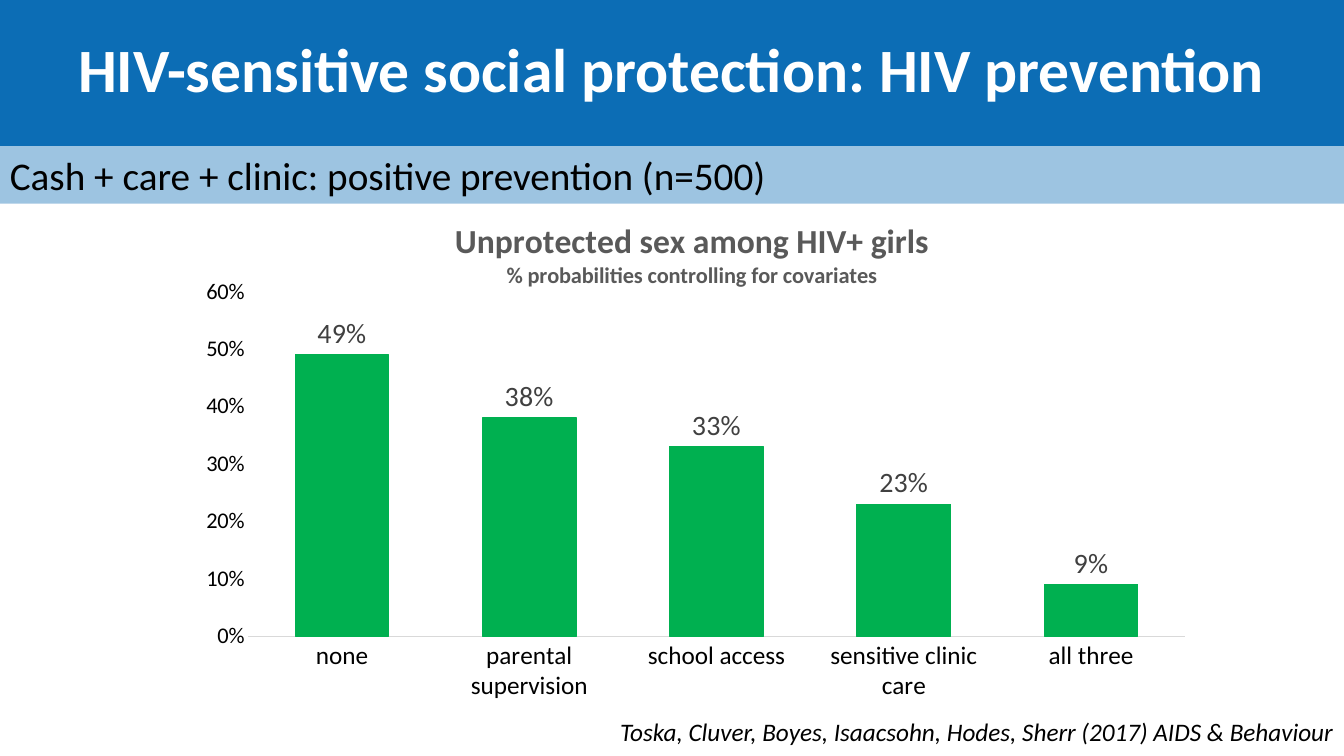
from dataclasses import dataclass

from lxml.etree import SubElement
from pptx import Presentation
from pptx.chart.data import CategoryChartData
from pptx.dml.color import RGBColor
from pptx.enum.chart import XL_CHART_TYPE as ChartType, XL_LABEL_POSITION as LabelPos, XL_TICK_MARK as Tick
from pptx.enum.shapes import MSO_SHAPE as Shape
from pptx.enum.text import MSO_ANCHOR as Anchor, PP_ALIGN as Align
from pptx.oxml import parse_xml
from pptx.oxml.ns import nsdecls, qn
from pptx.util import Cm, Pt


@dataclass(frozen=True)
class Theme:
    font: str = "Calibri"
    blue: str = "0C6DB5"
    green: str = "00B050"
    black: str = "000000"
    white: str = "FFFFFF"
    title_gray: str = "595959"
    label_gray: str = "404040"
    axis_gray: str = "D9D9D9"
    heading: float = 44
    subheading: float = 28
    chart_title: float = 24
    label: float = 20
    body: float = 18
    small: float = 16


@dataclass(frozen=True)
class Box:
    left: float
    top: float
    width: float
    height: float

    def lengths(self) -> tuple:
        return Cm(self.left), Cm(self.top), Cm(self.width), Cm(self.height)


@dataclass(frozen=True)
class Band:
    text: str
    box: Box
    size: float
    color: str
    bold: bool = False
    align: Align = Align.LEFT
    spacing: float = 1.0
    alpha: int = 100


THEME = Theme()
WIDTH, HEIGHT = 33.87, 19.05
BANDS = [
    Band("Cash + care + clinic: positive prevention (n=500)", Box(0, 3.68, WIDTH, 1.45),
         THEME.subheading, THEME.black, alpha=40),
    Band("HIV-sensitive social protection: HIV prevention", Box(0, 0, WIDTH, 3.68),
         THEME.heading, THEME.white, bold=True, align=Align.CENTER, spacing=0.9),
]
CHART_BOX = Box(4.72, 4.37, 25.65, 13.56)
CITATION_BOX = Box(15.09, 17.93, 18.77, 1.02)
PROBABILITIES = {
    "none": 0.49,
    "parental supervision": 0.38,
    "school access": 0.33,
    "sensitive clinic care": 0.23,
    "all three": 0.09,
}


def style_font(font, size: float, color: str, bold: bool = False, italic: bool = False) -> None:
    font.name = THEME.font
    font.size = Pt(size)
    font.bold = bold
    font.italic = italic
    font.color.rgb = RGBColor.from_string(color)


def write(p, text: str, *, size: float, color: str, bold: bool = False, italic: bool = False,
          align: Align = Align.LEFT, spacing: float = 1.0) -> None:
    p.alignment = align
    p.line_spacing = spacing
    r = p.add_run()
    r.text = text
    style_font(r.font, size, color, bold, italic)


def add_band(s, band: Band) -> None:
    sp = s.shapes.add_shape(Shape.RECTANGLE, *band.box.lengths())
    sp.shadow.inherit = False
    sp.fill.solid()
    sp.fill.fore_color.rgb = RGBColor.from_string(THEME.blue)
    sp.line.fill.background()
    if band.alpha < 100:
        color = sp._element.spPr.find(f".//{qn('a:srgbClr')}")
        SubElement(color, qn("a:alpha")).set("val", str(band.alpha * 1000))
    tf = sp.text_frame
    tf.word_wrap = True
    tf.vertical_anchor = Anchor.MIDDLE
    write(tf.paragraphs[0], band.text, size=band.size, color=band.color, bold=band.bold,
          align=band.align, spacing=band.spacing)


def set_layout(parent, index: int, **place: float) -> None:
    for old in parent.findall(qn("c:layout")):
        parent.remove(old)
    target = '<c:layoutTarget val="inner"/>' if "w" in place else ""
    modes = "".join(f'<c:{k}Mode val="edge"/>' for k in "xy")
    values = "".join(f'<c:{k} val="{v}"/>' for k, v in place.items())
    parent.insert(index, parse_xml(
        f'<c:layout {nsdecls("c")}><c:manualLayout>{target}{modes}{values}</c:manualLayout></c:layout>'))


def add_title(chart) -> None:
    chart.has_title = True
    title = chart.chart_title
    tf = title.text_frame
    write(tf.paragraphs[0], "Unprotected sex among HIV+ girls", size=THEME.chart_title,
          color=THEME.title_gray, bold=True, align=Align.CENTER)
    write(tf.add_paragraph(), "% probabilities controlling for covariates", size=THEME.small,
          color=THEME.title_gray, bold=True, align=Align.CENTER)
    title.include_in_layout = False
    set_layout(title._element, 1, x=0.26, y=0.08)


def style_axis(axis, size: float) -> None:
    axis.major_tick_mark = axis.minor_tick_mark = Tick.NONE
    axis.has_major_gridlines = False
    style_font(axis.tick_labels.font, size, THEME.black)


def add_probability_chart(s) -> None:
    data = CategoryChartData(number_format="0%")
    data.categories = list(PROBABILITIES)
    data.add_series("Series 1", list(PROBABILITIES.values()))
    chart = s.shapes.add_chart(ChartType.COLUMN_CLUSTERED, *CHART_BOX.lengths(), data).chart
    style_font(chart.font, 10, THEME.black)
    chart.has_legend = False
    add_title(chart)

    style_axis(chart.category_axis, THEME.body)
    line = chart.category_axis.format.line
    line.color.rgb = RGBColor.from_string(THEME.axis_gray)
    line.width = Pt(0.75)
    values = chart.value_axis
    style_axis(values, THEME.small)
    values.minimum_scale, values.maximum_scale, values.major_unit = 0, 0.6, 0.1
    values.tick_labels.number_format = "0%"
    values.tick_labels.number_format_is_linked = False
    values.format.line.fill.background()

    plot = chart.plots[0]
    plot.gap_width, plot.overlap = 100, -27
    plot.vary_by_categories = False
    bars = plot.series[0].format
    bars.fill.solid()
    bars.fill.fore_color.rgb = bars.line.color.rgb = RGBColor.from_string(THEME.green)
    bars.line.width = Pt(0.75)
    labels = plot.series[0].data_labels
    labels.show_value = True
    labels.number_format = "0%"
    labels.number_format_is_linked = False
    labels.position = LabelPos.OUTSIDE_END
    style_font(labels.font, THEME.label, THEME.label_gray)
    set_layout(chart._chartSpace.chart.plotArea, 0, x=0.06, y=0.22, w=0.92, h=0.64)


def add_citation(s) -> None:
    tf = s.shapes.add_textbox(*CITATION_BOX.lengths()).text_frame
    tf.word_wrap = False
    write(tf.paragraphs[0], "Toska, Cluver, Boyes, Isaacsohn, Hodes, Sherr (2017) AIDS & Behaviour",
          size=THEME.body, color=THEME.black, italic=True, align=Align.RIGHT)


def main() -> None:
    prs = Presentation()
    prs.slide_width, prs.slide_height = Cm(WIDTH), Cm(HEIGHT)
    s = prs.slides.add_slide(prs.slide_layouts[6])
    add_probability_chart(s)
    add_citation(s)
    for band in BANDS:
        add_band(s, band)
    prs.save("out.pptx")


if __name__ == "__main__":
    main()
